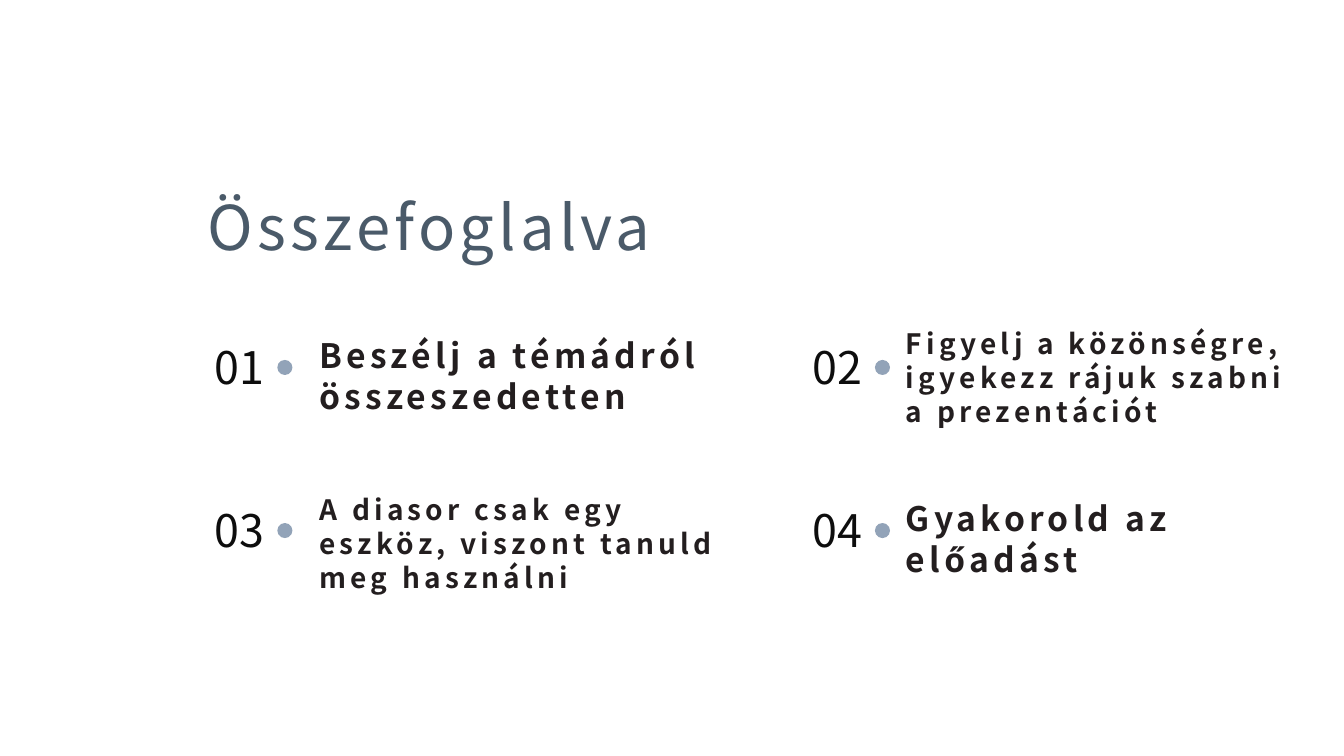
"""Build the summary slide: a title above a two by two grid of numbered points."""
from pptx import Presentation
from pptx import util as u
from pptx.dml.color import RGBColor
from pptx.enum import shapes, text

FONT = "Noto Sans CJK SC"
HUES = {"title": "4A5A69", "num": "0D0D0D", "body": "231E1F", "dot": "92A3B8"}
TITLE = "Összefoglalva"
# text, size in points, then left, top, width and height in cm
POINTS = [
    ("Beszélj a témádról\nösszeszedetten", 24, (7.8, 8.31, 10.31, 2.31)),
    ("Figyelj a közönségre,\nigyekezz rájuk szabni\na prezentációt", 20,
     (22.58, 8.1, 10.31, 2.82)),
    ("A diasor csak egy\neszköz, viszont tanuld\nmeg használni", 20,
     (7.8, 12.29, 13, 2.82)),
    ("Gyakorold az\nelőadást", 24, (22.58, 12.42, 7.42, 2.31)),
]
LEFT, TOP = 4.98, 8.43
COL, ROW = 15.06, 4.11
DOT = 0.38


def cms(*vals):
    return [u.Cm(v) for v in vals]


def write(box, words, size, hue, bold=False, gap=0, align=text.PP_ALIGN.LEFT):
    frame = box.text_frame
    frame.word_wrap = True
    frame.auto_size = text.MSO_AUTO_SIZE.SHAPE_TO_FIT_TEXT
    frame.vertical_anchor = text.MSO_ANCHOR.TOP
    para = frame.paragraphs[0]
    para.text = words
    para.alignment = align
    para.line_spacing = u.Pt(round(size * 1.21, 1))
    for run in para.runs:
        font = run.font
        font.name, font.size, font.bold = FONT, u.Pt(size), bold
        font.color.rgb = RGBColor.from_string(HUES[hue])
        run._r.get_or_add_rPr().set("spc", str(gap * 100))


def main():
    deck = Presentation()
    deck.slide_width, deck.slide_height = cms(33.87, 19.05)
    slide = deck.slides.add_slide(deck.slide_layouts[5])
    items = slide.shapes

    head = items.title
    head.left, head.top, head.width, head.height = cms(LEFT, 4.62, 12.19, 2.13)
    write(head, TITLE, 44, "title", gap=3)

    for i, (words, size, place) in enumerate(POINTS):
        row, col = divmod(i, 2)
        x, y = LEFT + col * COL, TOP + row * ROW
        num = items.add_textbox(*cms(x, y, 2.13, 1.63))
        write(num, f"{i + 1:02}", 32, "num", align=text.PP_ALIGN.CENTER)

        dot = items.add_shape(shapes.MSO_SHAPE.OVAL,
                              *cms(x + 2.01, y + 0.64, DOT, DOT))
        dot.shadow.inherit = False
        dot.fill.solid()
        dot.fill.fore_color.rgb = RGBColor.from_string(HUES["dot"])
        dot.line.fill.background()

        write(items.add_textbox(*cms(*place)), words, size, "body", True, 3)

    deck.save("out.pptx")


if __name__ == "__main__":
    main()
